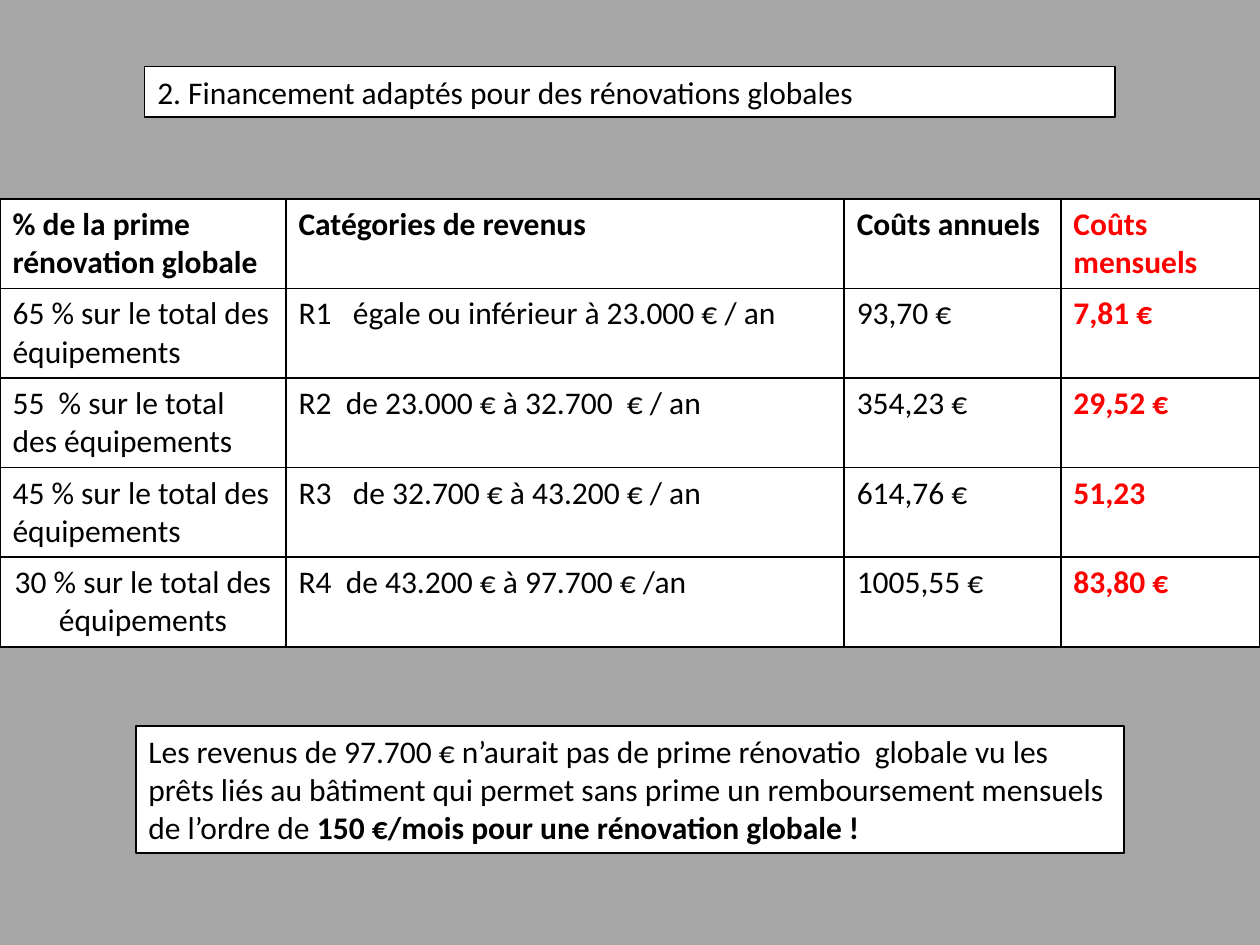
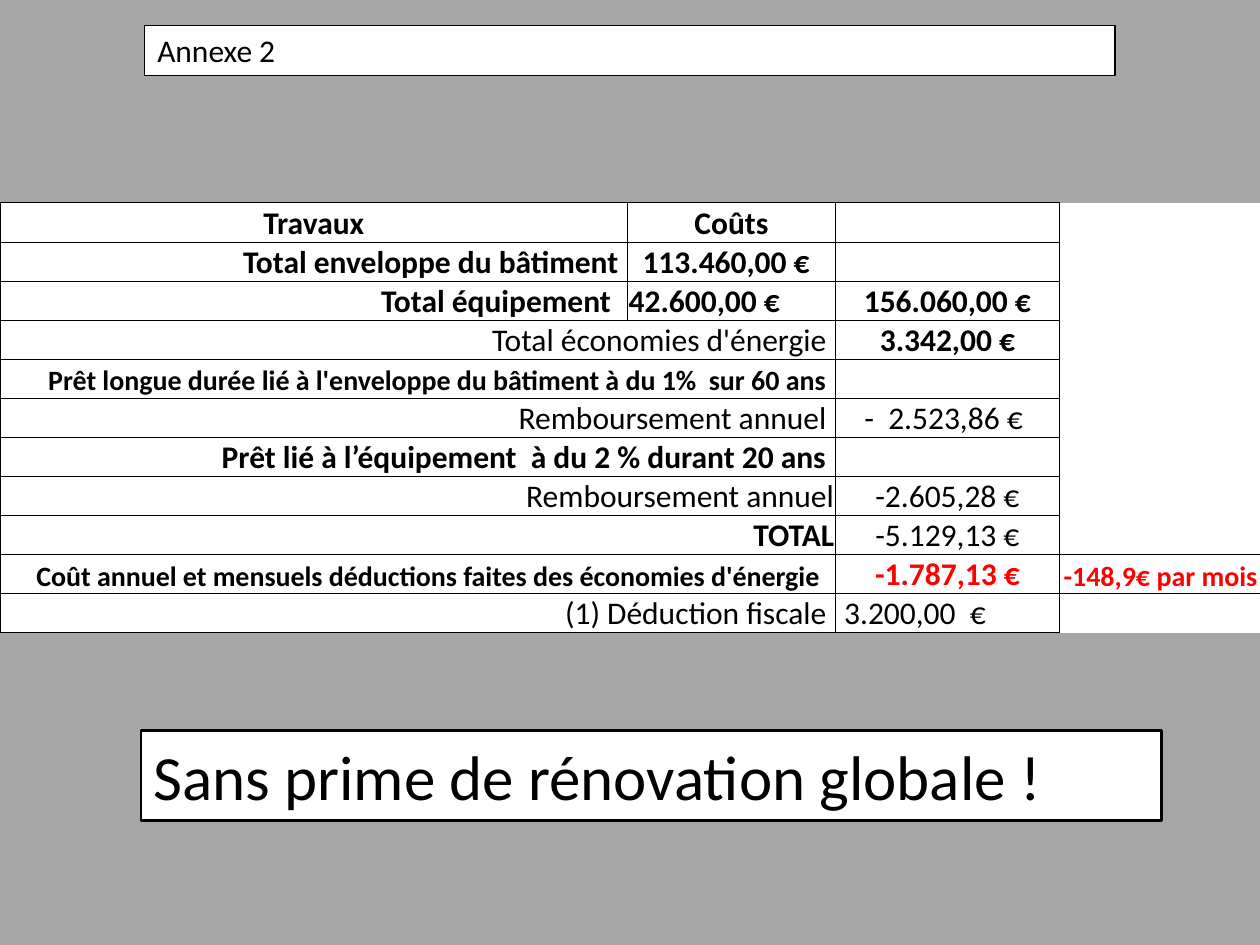
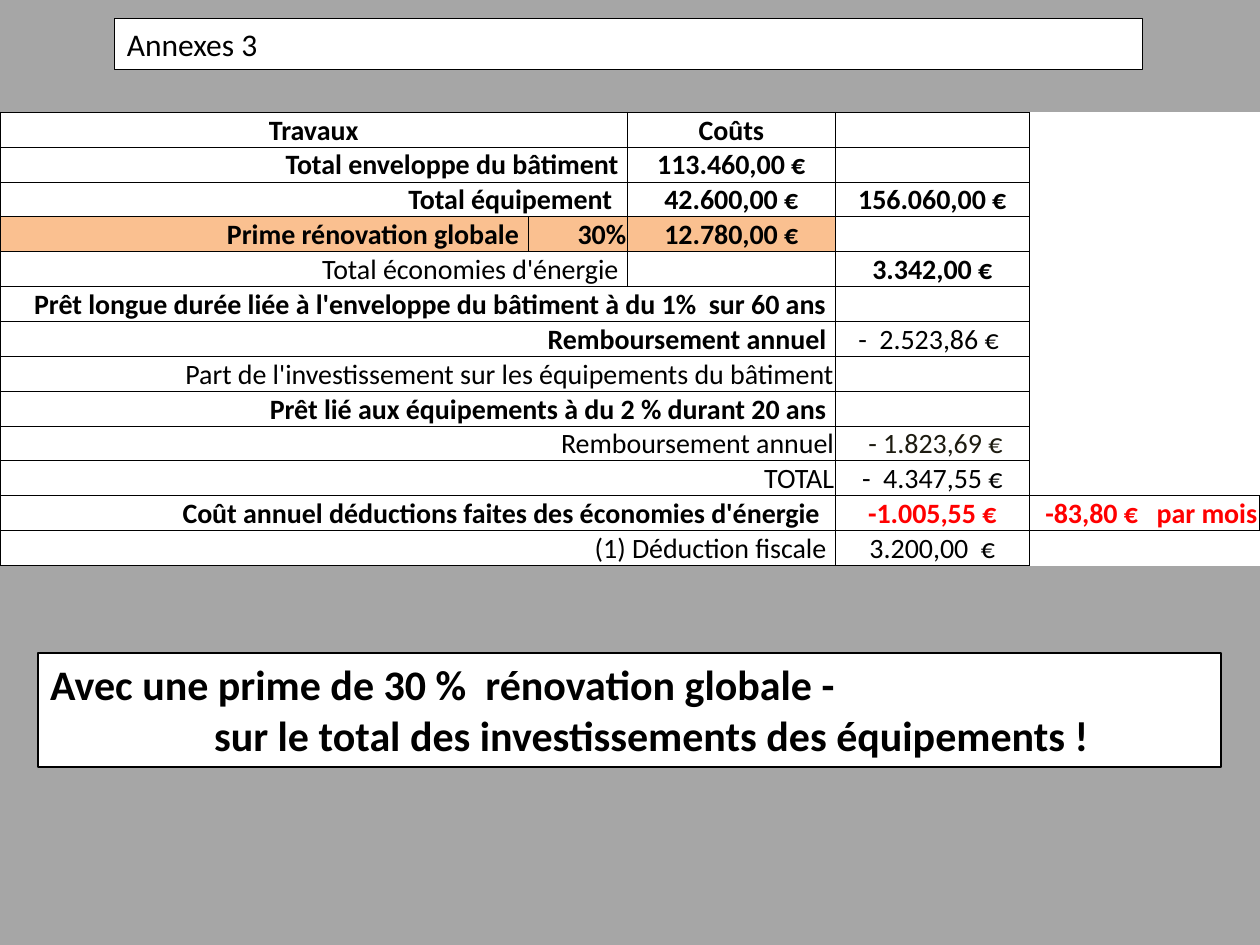
from dataclasses import dataclass
from functools import partial

from lxml.etree import SubElement
from pptx import Presentation
from pptx.dml.color import RGBColor
from pptx.enum.shapes import MSO_SHAPE
from pptx.enum.text import MSO_ANCHOR, MSO_AUTO_SIZE, PP_ALIGN
from pptx.oxml.ns import qn
from pptx.util import Inches, Pt

BACKDROP = RGBColor(0xA6, 0xA6, 0xA6)
PAPER = RGBColor(0xFF, 0xFF, 0xFF)
INK = RGBColor(0x00, 0x00, 0x00)
SOFT_INK = RGBColor(0x1D, 0x1B, 0x10)
ALERT = RGBColor(0xFF, 0x00, 0x00)
GRANT = RGBColor(0xFA, 0xC0, 0x90)

FONT = "Calibri"
SLIDE_WIDTH, SLIDE_HEIGHT = Inches(10), Inches(7.5)
COLUMN, ROW = SLIDE_WIDTH / 100, SLIDE_HEIGHT / 75
LEFT, CENTER, RIGHT = PP_ALIGN.LEFT, PP_ALIGN.CENTER, PP_ALIGN.RIGHT
SIDES = {"l": "a:lnL", "r": "a:lnR", "t": "a:lnT", "b": "a:lnB"}
TIGHT = 0.01


@dataclass
class Cell:
    text: str = ""
    bold: bool = False
    align: PP_ALIGN = LEFT
    color: RGBColor = INK
    fill: RGBColor = PAPER
    size: float = 0
    span: int = 1
    indent: float = TIGHT
    outdent: float = TIGHT


label = partial(Cell, align=RIGHT, outdent=0.07)
strong = partial(label, bold=True)
amount = partial(Cell, align=CENTER)
total = partial(amount, bold=True)
warning = partial(total, color=ALERT)


def set_all(target, values):
    for name, value in values.items():
        setattr(target, name, value)


def place(box):
    """Turn grid columns and rows into slide lengths."""
    left, top, width, height = box
    return [round(n) for n in (left * COLUMN, top * ROW, width * COLUMN, height * ROW)]


def write(paragraph, text, size, bold=False, color=INK):
    run = paragraph.add_run()
    run.text = text
    set_all(run.font, {"name": FONT, "size": Pt(size), "bold": bold})
    run.font.color.rgb = color


def add_banner(slide, box, paragraphs, size=18, line=0.75):
    """Framed text; each paragraph is (alignment, indent, [(text, bold), ...])."""
    frame = slide.shapes.add_shape(MSO_SHAPE.RECTANGLE, *place(box))
    frame.shadow.inherit = False
    frame.fill.solid()
    frame.fill.fore_color.rgb = PAPER
    frame.line.color.rgb = INK
    frame.line.width = Pt(line)
    body = frame.text_frame
    set_all(body, {"word_wrap": True, "vertical_anchor": MSO_ANCHOR.TOP,
                   "auto_size": MSO_AUTO_SIZE.SHAPE_TO_FIT_TEXT})
    for number, (align, indent, runs) in enumerate(paragraphs):
        paragraph = body.add_paragraph() if number else body.paragraphs[0]
        paragraph.alignment = align
        paragraph._p.get_or_add_pPr().set("marL", str(Inches(indent)))
        for text, bold in runs:
            write(paragraph, text, size, bold)


def add_borders(cell, drawn, width):
    properties = cell._tc.get_or_add_tcPr()
    for position, (side, tag) in enumerate(SIDES.items()):
        edge = properties.makeelement(qn(tag), {"w": str(Pt(width))})
        properties.insert(position, edge)
        if side in drawn:
            paint = SubElement(edge, qn("a:solidFill"))
            SubElement(paint, qn("a:srgbClr"), val=str(INK))
        else:
            SubElement(edge, qn("a:noFill"))


def fill_cell(cell, content, size, anchor, top, bottom):
    set_all(cell, {
        "vertical_anchor": anchor,
        "margin_left": Inches(content.indent), "margin_right": Inches(content.outdent),
        "margin_top": Inches(top), "margin_bottom": Inches(bottom)})
    cell.fill.solid()
    cell.fill.fore_color.rgb = content.fill
    paragraph = cell.text_frame.paragraphs[0]
    paragraph.alignment = content.align
    if content.text:
        write(paragraph, content.text, content.size or size, content.bold, content.color)
    else:
        SubElement(paragraph._p, qn("a:endParaRPr"), sz=str(size * 100))


def add_grid(slide, box, widths, rows, size, line, borders,
             anchor=MSO_ANCHOR.BOTTOM, top=TIGHT, bottom=0):
    """Table whose rows share the box height; borders(row, column) names drawn sides."""
    table = slide.shapes.add_table(len(rows), len(widths), *place(box)).table
    set_all(table, {"first_row": False, "horz_banding": False})
    for column, width in zip(table.columns, widths):
        column.width = round(width * COLUMN)
    for row in table.rows:
        row.height = round(box[3] * ROW / len(rows))
    for r, contents in enumerate(rows):
        c = 0
        blanks = [Cell()] * (len(widths) - sum(content.span for content in contents))
        for content in contents + blanks:
            fill_cell(table.cell(r, c), content, size, anchor, top, bottom)
            for covered in range(c, c + content.span):
                add_borders(table.cell(r, covered), borders(r, covered), line)
            if content.span > 1:
                table.cell(r, c).merge(table.cell(r, c + content.span - 1))
            c += content.span


def add_costs(slide, box, widths, rows, size):
    """Cost table with two open columns at the right that hold the monthly cost."""
    first_open = len(widths) - 2
    monthly = len(rows) - 2

    def borders(r, c):
        if c < first_open:
            return "lrtb"
        side = "l" if c == first_open else ""
        if r == monthly:
            return "tb" + (side or "r")
        return side + {monthly - 1: "b", monthly + 1: "t"}.get(r, "")

    add_grid(slide, box, widths, rows, size, 0.5, borders)


def plain(text):
    return [(LEFT, 0, [(text, False)])]


def build_financing(slide):
    padded = partial(Cell, indent=0.1, outdent=0.1)
    header = partial(padded, bold=True)
    share = "% sur le total des équipements"
    levels = [
        ("65 ", "R1   égale ou inférieur à 23.000 € / an", "93,70 €", "7,81 €"),
        ("55  ", "R2  de 23.000 € à 32.700  € / an", "354,23 €", "29,52 €"),
        ("45 ", "R3   de 32.700 € à 43.200 € / an", "614,76 €", "51,23"),
        ("30 ", "R4  de 43.200 € à 97.700 € /an", "1005,55 €", "83,80 €"),
    ]
    rows = [[header("% de la prime rénovation globale"), header("Catégories de revenus"),
             header("Coûts annuels"), header("Coûts mensuels", color=ALERT)]]
    for rate, income, yearly, monthly in levels:
        rows.append([padded(rate + share), padded(income), padded(yearly),
                     header(monthly, color=ALERT)])
    rows[-1][0].align = CENTER
    add_grid(slide, (0, 15.8, 100, 35.5), (22.7, 44.3, 17.2, 15.8), rows, 18, 1,
             lambda r, c: "lrtb", MSO_ANCHOR.TOP, 0.05, 0.05)
    add_banner(slide, (10.8, 57.6, 78.4, 10.1), [(LEFT, 0, [
        ("Les revenus de 97.700 € n’aurait pas de prime rénovatio  globale vu les prêts "
         "liés au bâtiment qui permet sans prime un remboursement mensuels de l’ordre de ",
         False),
        ("150 €/mois pour une rénovation globale !", True)])], line=1)
    add_banner(slide, (11.5, 5.3, 77, 4),
               plain("2. Financement adaptés pour des rénovations globales"))


def build_without_grant(slide):
    add_banner(slide, (11.5, 2, 77, 4), plain("Annexe 2"))
    add_banner(slide, (11.2, 58, 81, 7.1), plain("Sans prime de rénovation globale !"), 36, 1.5)
    rows = [
        [total("Travaux"), total("Coûts")],
        [strong("Total enveloppe du bâtiment"), Cell("113.460,00 €", True, indent=0.12)],
        [strong("Total équipement", outdent=0.13), Cell("42.600,00 €", True),
         total("156.060,00 €")],
        [label("Total économies d'énergie", span=2), total("3.342,00 €")],
        [strong("Prêt longue durée lié à l'enveloppe du bâtiment à du 1%  sur 60 ans",
                size=16, span=2)],
        [label("Remboursement annuel", span=2), amount("-  2.523,86 €", outdent=0.07)],
        [strong("Prêt lié à l’équipement  à du 2 % durant 20 ans", span=2)],
        [label("Remboursement annuel", span=2, outdent=TIGHT), amount("-2.605,28 €")],
        [strong("TOTAL", span=2, outdent=TIGHT), amount("-5.129,13 €")],
        [strong("Coût annuel et mensuels déductions faites des économies d'énergie",
                size=16, span=2, outdent=0.12),
         warning("-1.787,13 €"), warning("-148,9€", size=16), warning("par mois", size=16)],
        [label("(1) Déduction fiscale", span=2), Cell("3.200,00  €", indent=0.07)],
    ]
    add_costs(slide, (0, 16.1, 100, 34.1), (49.8, 16.5, 17.8, 7.5, 8.4), rows, 18)


def build_with_grant(slide):
    add_banner(slide, (9.1, 1.5, 81.6, 4), plain("Annexes 3"))
    add_banner(slide, (3, 51.8, 93.9, 9.1), [
        (LEFT, 0, [("Avec une prime de 30 %  rénovation globale -", True)]),
        (CENTER, 0.35, [("sur le total des investissements des équipements !", True)]),
    ], 24, 1)
    rows = [
        [total("Travaux", span=2), total("Coûts")],
        [strong("Total enveloppe du bâtiment", span=2), total("113.460,00 €")],
        [strong("Total équipement", span=2, outdent=0.12), total("42.600,00 €"),
         total("156.060,00 €")],
        [strong("Prime rénovation globale", fill=GRANT),
         strong("30%", fill=GRANT, outdent=TIGHT), total("12.780,00 €", fill=GRANT)],
        [label("Total économies d'énergie", span=2), Cell(), total("3.342,00 €")],
        [strong("Prêt longue durée liée à l'enveloppe du bâtiment à du 1%  sur 60 ans", span=3)],
        [strong("Remboursement annuel", span=3), amount("-  2.523,86 €", outdent=0.07)],
        [label("Part de l'investissement sur les équipements du bâtiment", span=3,
               outdent=TIGHT)],
        [strong("Prêt lié aux équipements à du 2 % durant 20 ans", span=3)],
        [label("Remboursement annuel", span=3, outdent=TIGHT),
         amount("- 1.823,69 €", color=SOFT_INK, indent=0.06)],
        [label("TOTAL", span=3, outdent=TIGHT), amount("-  4.347,55 €")],
        [strong("Coût annuel déductions faites des économies d'énergie", span=3, outdent=0.12),
         warning("-1.005,55 €"), warning("-83,80 €"), warning("par mois")],
        [label("(1) Déduction fiscale", span=3), amount("3.200,00  €")],
    ]
    add_costs(slide, (0, 8.9, 100, 36), (41.9, 7.9, 16.5, 15.4, 9.9, 8.4), rows, 16)


def main():
    deck = Presentation()
    set_all(deck, {"slide_width": SLIDE_WIDTH, "slide_height": SLIDE_HEIGHT})
    backdrop = deck.slide_master.background.fill
    backdrop.solid()
    backdrop.fore_color.rgb = BACKDROP
    for build in (build_financing, build_without_grant, build_with_grant):
        build(deck.slides.add_slide(deck.slide_layouts[6]))
    deck.save("out.pptx")


if __name__ == "__main__":
    main()
